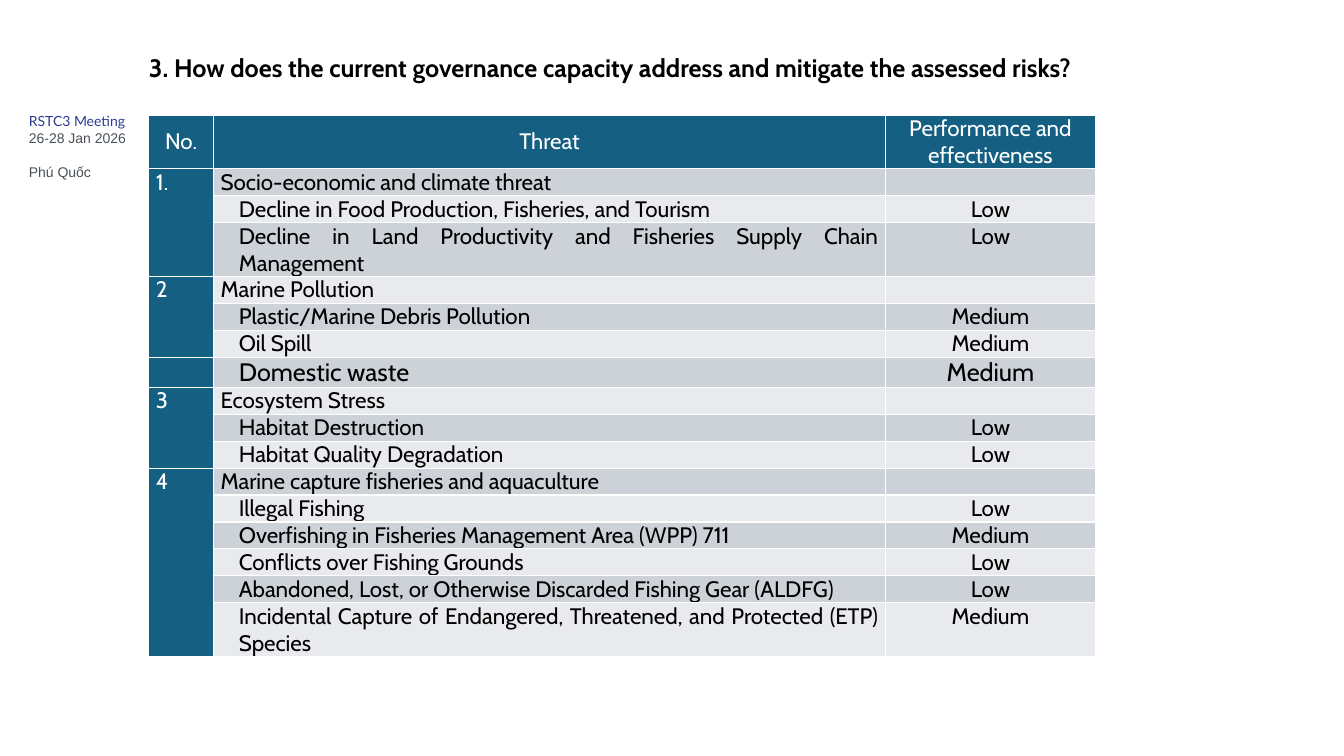
import pptx
import pptx.util
import pptx.dml.color
import pptx.enum.text
from lxml import etree

Cm = pptx.util.Cm
Pt = pptx.util.Pt
Align = pptx.enum.text.PP_ALIGN
Anchor = pptx.enum.text.MSO_ANCHOR

COLOURS = {
    "black": "000000",
    "white": "FFFFFF",
    "header": "156082",
    "odd": "CCD2D8",
    "even": "E8EAED",
    "event": "2B3C94",
    "detail": "495057",
}

HEADINGS = ["No.", "Threat", "Performance and effectiveness"]
GROUPS = [
    ("1.", [
        ("Socio-economic and climate threat", ""),
        ("Decline in Food Production, Fisheries, and Tourism", "Low"),
        ("Decline in Land Productivity and Fisheries Supply Chain Management", "Low"),
    ]),
    ("2", [
        ("Marine Pollution", ""),
        ("Plastic/Marine Debris Pollution", "Medium"),
        ("Oil Spill", "Medium"),
    ]),
    ("", [("Domestic waste", "Medium")]),
    ("3", [
        ("Ecosystem Stress", ""),
        ("Habitat Destruction", "Low"),
        ("Habitat Quality Degradation", "Low"),
    ]),
    ("4", [
        ("Marine capture fisheries and aquaculture", ""),
        ("Illegal Fishing", "Low"),
        ("Overfishing in Fisheries Management Area (WPP) 711", "Medium"),
        ("Conflicts over Fishing Grounds", "Low"),
        ("Abandoned, Lost, or Otherwise Discarded Fishing Gear (ALDFG)", "Low"),
        ("Incidental Capture of Endangered, Threatened, and Protected (ETP) Species", "Medium"),
    ]),
]


def colour(name):
    return pptx.dml.color.RGBColor.from_string(COLOURS[name])


def write(para, text, size=16, font="Cabin", ink="black", bold=False,
          align=Align.LEFT, indent=0, before=0):
    para.alignment = align
    para.space_before = Pt(before)
    if indent:
        para._p.get_or_add_pPr().set("marL", str(Cm(indent)))
    if not text:
        tag = "{http://schemas.openxmlformats.org/drawingml/2006/main}endParaRPr"
        etree.SubElement(para._p, tag).set("sz", str(size * 100))
        return
    span = para.add_run()
    span.text = text
    span.font.size = Pt(size)
    span.font.name = font
    span.font.bold = bold
    span.font.color.rgb = colour(ink)


class PageBuilder:
    row_height = 0.6
    side_margin = 0.18
    threat_indent = 0.46

    def __init__(self, deck):
        self.page = deck.slides.add_slide(deck.slide_layouts[5])

    def place_text(self, box, left, top, width, height):
        box.left, box.top, box.width, box.height = map(Cm, (left, top, width, height))
        frame = box.text_frame
        frame.word_wrap = True
        frame.vertical_anchor = Anchor.TOP
        frame.auto_size = pptx.enum.text.MSO_AUTO_SIZE.SHAPE_TO_FIT_TEXT
        return frame

    def title(self, text, *place):
        frame = self.place_text(self.page.shapes.title, *place)
        write(frame.paragraphs[0], text, size=18, bold=True)

    def event_note(self, lines, *place):
        box = self.page.shapes.add_textbox(0, 0, 0, 0)
        frame = self.place_text(box, *place)
        for index, (text, style) in enumerate(lines):
            para = frame.add_paragraph() if index else frame.paragraphs[0]
            write(para, text, size=10, **style)

    def cell(self, cell, text, fill, anchor=Anchor.TOP, **style):
        cell.fill.solid()
        cell.fill.fore_color.rgb = colour(fill)
        cell.margin_left = cell.margin_right = Cm(self.side_margin)
        cell.margin_top = cell.margin_bottom = 0
        cell.vertical_anchor = anchor
        write(cell.text_frame.paragraphs[0], text, **style)

    def threat_table(self, left, top, widths, height):
        row_count = 1 + sum(len(threats) for number, threats in GROUPS)
        holder = self.page.shapes.add_table(
            row_count, len(widths), Cm(left), Cm(top), Cm(sum(widths)), Cm(height))
        table = holder.table
        for column, width in zip(table.columns, widths):
            column.width = Cm(width)
        for row in table.rows:
            row.height = Cm(self.row_height)
        holder.height = Cm(height)

        for index, heading in enumerate(HEADINGS):
            self.cell(table.cell(0, index), heading, "header", Anchor.MIDDLE,
                      ink="white", align=Align.CENTER)
        row = 1
        for number, threats in GROUPS:
            first = row
            size = 16 if number else 18
            for threat, rating in threats:
                band = "odd" if row % 2 else "even"
                self.cell(table.cell(row, 0), number if row == first else "", "header",
                          ink="white", align=Align.JUSTIFY)
                self.cell(table.cell(row, 1), threat, band, size=size, align=Align.JUSTIFY,
                          indent=self.threat_indent if rating else 0)
                self.cell(table.cell(row, 2), rating, band, size=size, align=Align.CENTER)
                row += 1
            if len(threats) > 1:
                table.cell(first, 0).merge(table.cell(row - 1, 0))


def main():
    deck = pptx.Presentation()
    deck.slide_width, deck.slide_height = Cm(33.87), Cm(19.05)
    builder = PageBuilder(deck)
    detail = {"font": "Arial", "ink": "detail"}
    builder.event_note([
        ("RSTC3 Meeting", {"font": "Lato", "ink": "event"}),
        ("26-28 Jan 2026", detail),
        ("Phú Quốc", {**detail, "before": 12}),
    ], 0.48, 2.72, 3.4, 1.55)
    builder.threat_table(3.75, 2.9, [1.63, 16.94, 5.28], 13.64)
    builder.title("3. How does the current governance capacity address and mitigate "
                  "the assessed risks?", 3.5, 1.19, 27.2, 1.02)
    deck.save("out.pptx")


if __name__ == "__main__":
    main()
